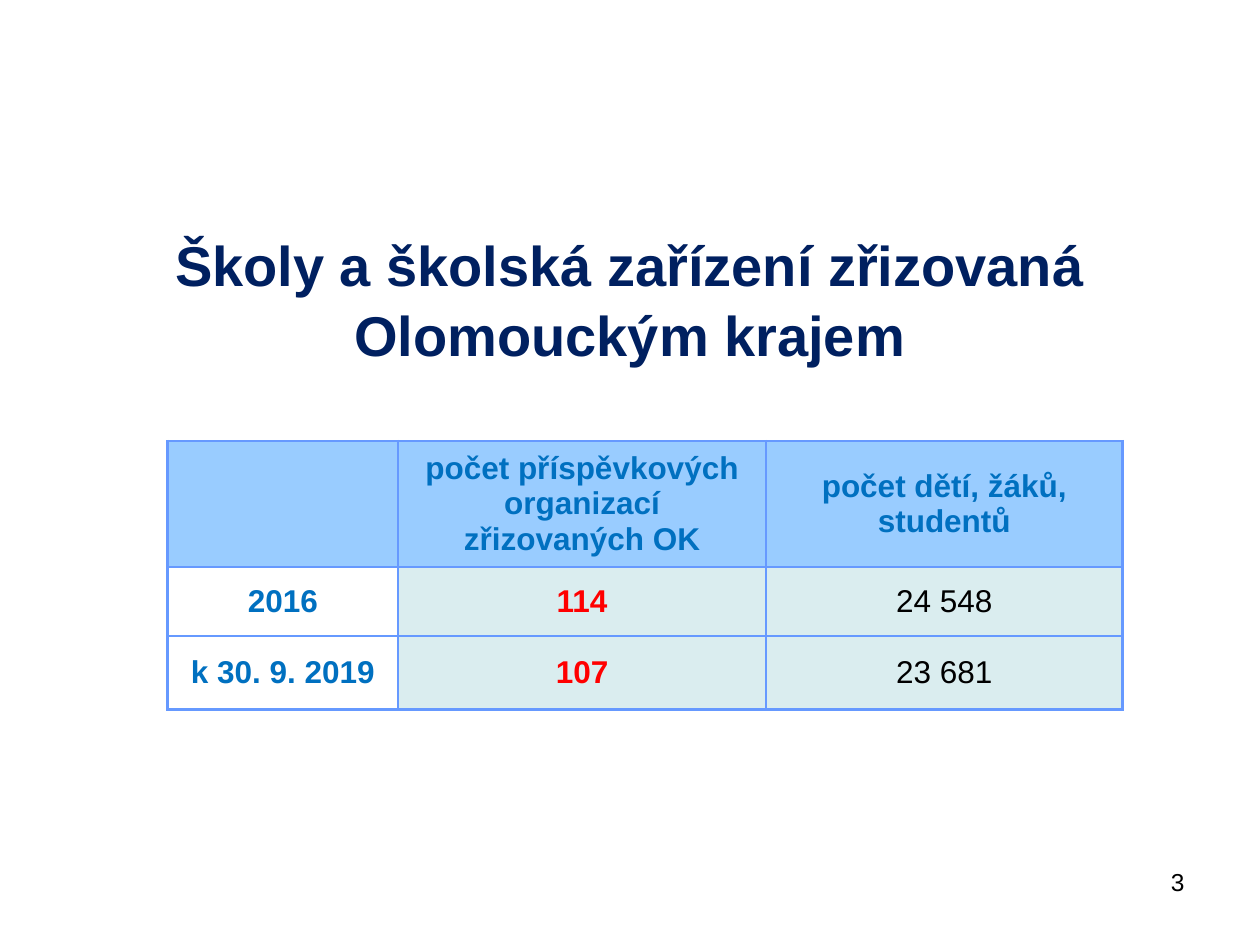
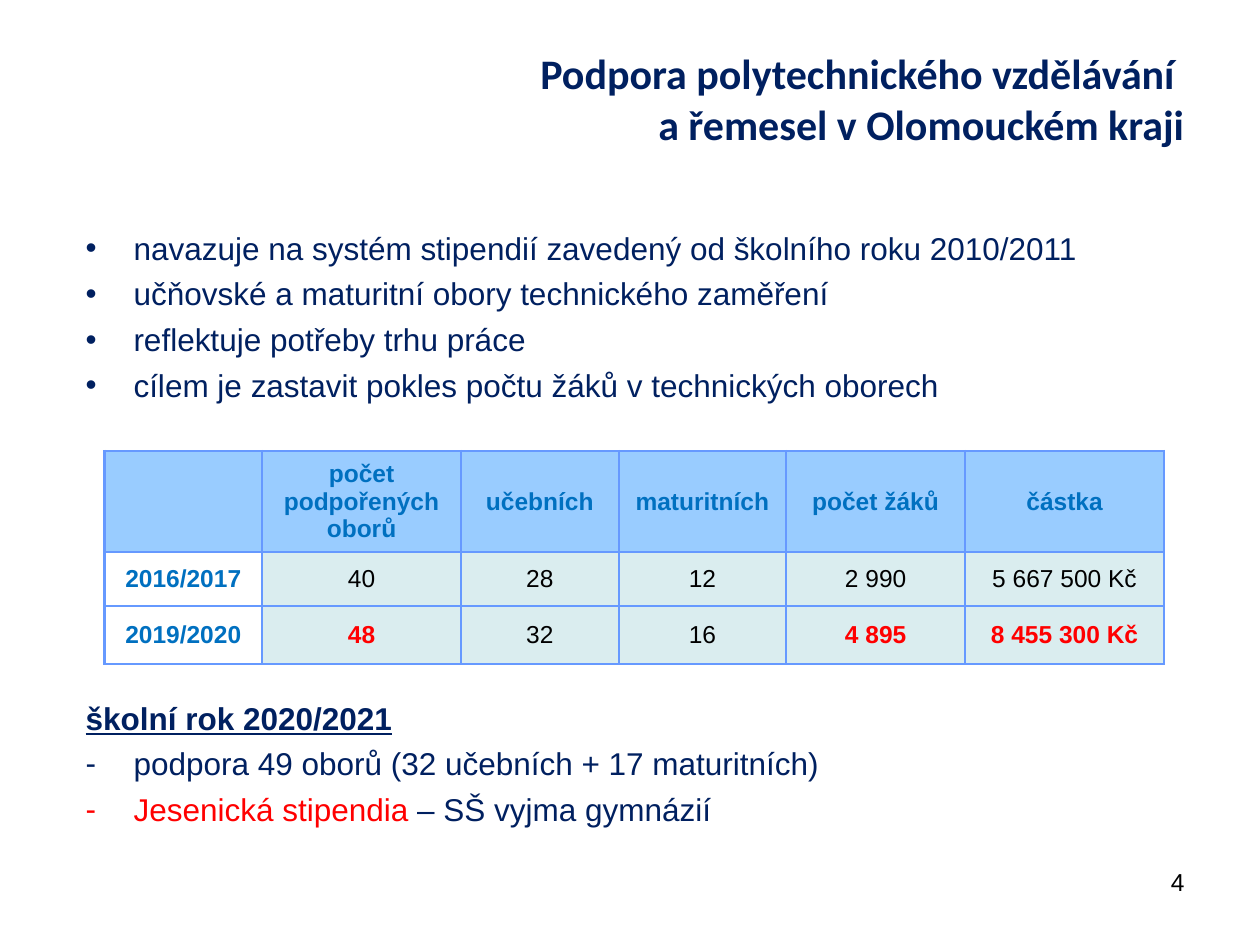
from dataclasses import dataclass

from lxml import etree
from pptx import Presentation
from pptx.dml.color import RGBColor
from pptx.enum.text import MSO_ANCHOR, MSO_AUTO_SIZE, PP_ALIGN
from pptx.oxml import parse_xml
from pptx.oxml.ns import nsdecls, qn
from pptx.util import Inches, Pt


@dataclass(frozen=True)
class Theme:
    navy: str = "002060"
    blue: str = "0070C0"
    red: str = "FF0000"
    black: str = "000000"
    header_fill: str = "99CCFF"
    value_fill: str = "DAEDEF"
    border: str = "6699FF"
    font: str = "Arial"
    title_font: str = "Calibri"
    section_size: int = 32
    title_size: int = 24
    body_size: int = 18
    small_size: int = 14


theme = Theme()


def format_runs(paragraph, size, color, bold=False, font=theme.font):
    for span in paragraph.runs:
        span.font.size = Pt(size)
        span.font.name = font
        span.font.bold = bold
        span.font.color.rgb = RGBColor.from_string(color)


def add_data_table(page, left, top, widths, heights, rows, size, highlights):
    """Add a bordered table; values listed in highlights are bold red."""
    frame = page.shapes.add_table(len(rows), len(widths), Inches(left), Inches(top),
                                  Inches(sum(widths)), Inches(sum(heights)))
    table = frame.table
    for column, width in zip(table.columns, widths):
        column.width = Inches(width)
    for row, height in zip(table.rows, heights):
        row.height = Inches(height)
    for row_index, values in enumerate(rows):
        for column_index, value in enumerate(values):
            cell = table.cell(row_index, column_index)
            cell.text = value
            cell.vertical_anchor = MSO_ANCHOR.MIDDLE
            cell.margin_left = cell.margin_right = Inches(0.12)
            properties = cell._tc.get_or_add_tcPr()
            for side in ("lnL", "lnR", "lnT", "lnB"):
                properties.append(parse_xml(
                    f'<a:{side} {nsdecls("a")} w="{Pt(1.5)}"><a:solidFill>'
                    f'<a:srgbClr val="{theme.border}"/></a:solidFill></a:{side}>'))
            is_label = row_index == 0 or column_index == 0
            if row_index > 0 and column_index == 0:
                cell.fill.background()
            else:
                cell.fill.solid()
                fill = theme.header_fill if row_index == 0 else theme.value_fill
                cell.fill.fore_color.rgb = RGBColor.from_string(fill)
            if value in highlights:
                color = theme.red
            else:
                color = theme.blue if is_label else theme.black
            para = cell.text_frame.paragraphs[0]
            para.alignment = PP_ALIGN.CENTER
            format_runs(para, size, color, is_label or value in highlights)


deck = Presentation()
deck.slide_width, deck.slide_height = Inches(10), Inches(7.5)
schools_page = deck.slides.add_slide(deck.slide_layouts[5])
support_page = deck.slides.add_slide(deck.slide_layouts[3])

# Titles and page numbers
titles = [
    (schools_page, "Školy a školská zařízení zřizovaná Olomouckým krajem",
     (0.5, 1.75, 9, 1.3), PP_ALIGN.CENTER, theme.section_size, theme.font, 1.05),
    (support_page, "Podpora polytechnického vzdělávání \va řemesel v Olomouckém kraji",
     (2.75, 0.33, 6.75, 0.91), PP_ALIGN.RIGHT, theme.title_size, theme.title_font, 1.0),
]
for number, (page, text, place, alignment, size, font, spacing) in enumerate(titles, start=3):
    title = page.shapes.title
    title.left, title.top, title.width, title.height = map(Inches, place)
    title.text_frame.text = text
    title.text_frame.auto_size = MSO_AUTO_SIZE.NONE
    title.text_frame.vertical_anchor = MSO_ANCHOR.TOP
    para = title.text_frame.paragraphs[0]
    para.alignment = alignment
    para.line_spacing = spacing
    format_runs(para, size, theme.navy, True, font)

    box = page.shapes.add_textbox(Inches(7.17), Inches(6.83), Inches(2.33), Inches(0.52))
    box.text_frame.word_wrap = True
    box.text_frame.text = str(number)
    para = box.text_frame.paragraphs[0]
    para.alignment = PP_ALIGN.RIGHT
    format_runs(para, theme.small_size, theme.black)

# Lists around the support table: each line is a bullet and its text
lists = [
    (1.75, 1.7, [
        ("•", "navazuje na systém stipendií zavedený od školního roku 2010/2011"),
        ("•", "učňovské a maturitní obory technického zaměření"),
        ("•", "reflektuje potřeby trhu práce"),
        ("•", "cílem je zastavit pokles počtu žáků v technických oborech"),
    ]),
    (5.48, 1.3, [
        (None, "školní rok 2020/2021"),
        ("-", "podpora 49 oborů (32 učebních + 17 maturitních)"),
        ("-", "Jesenická stipendia "),
    ]),
]
bodies = [shape for shape in support_page.placeholders if shape.placeholder_format.idx > 0]
for body, (top, height, lines) in zip(bodies, lists):
    body.left, body.top = Inches(0.58), Inches(top)
    body.width, body.height = Inches(9), Inches(height)
    body.text_frame.text = "\n".join(text for _, text in lines)
    body.text_frame.auto_size = MSO_AUTO_SIZE.NONE
    for index, (para, (bullet, _)) in enumerate(zip(body.text_frame.paragraphs, lines)):
        properties = para._p.get_or_add_pPr()
        indent = Inches(0.38) if bullet else 0
        properties.set("marL", str(indent))
        properties.set("indent", str(-indent))
        if bullet:
            etree.SubElement(properties, qn("a:buFont"), typeface=theme.font)
            etree.SubElement(properties, qn("a:buChar"), char=bullet)
        else:
            etree.SubElement(properties, qn("a:buNone"))
        para.line_spacing = 1.05
        para.space_before = Pt(3.5 if index else 0)
        format_runs(para, theme.body_size, theme.navy, bullet is None)

year_heading, _, scholarships = bodies[1].text_frame.paragraphs
year_heading.runs[0].font.underline = True
scholarships.add_run().text = "– SŠ vyjma gymnázií"
format_runs(scholarships, theme.body_size, theme.navy)
scholarships.runs[0].font.color.rgb = RGBColor.from_string(theme.red)

# Tables
add_data_table(
    schools_page, 1.33, 3.5, (1.83, 2.92, 2.83), (0.94, 0.55, 0.58),
    [("", "počet příspěvkových organizací zřizovaných OK", "počet dětí, žáků, studentů"),
     ("2016", "114", "24 548"),
     ("k 30. 9. 2019", "107", "23 681")],
    theme.body_size, {"114", "107"})
add_data_table(
    support_page, 0.83, 3.58, (1.25, 1.58, 1.25, 1.33, 1.42, 1.58), (0.8, 0.43, 0.46),
    [("", "počet podpořených oborů", "učebních", "maturitních", "počet žáků", "částka"),
     ("2016/2017", "40", "28", "12", "2 990", "5 667 500 Kč"),
     ("2019/2020", "48", "32", "16", "4 895", "8 455 300 Kč")],
    theme.small_size, {"48", "4 895", "8 455 300 Kč"})

deck.save("out.pptx")
